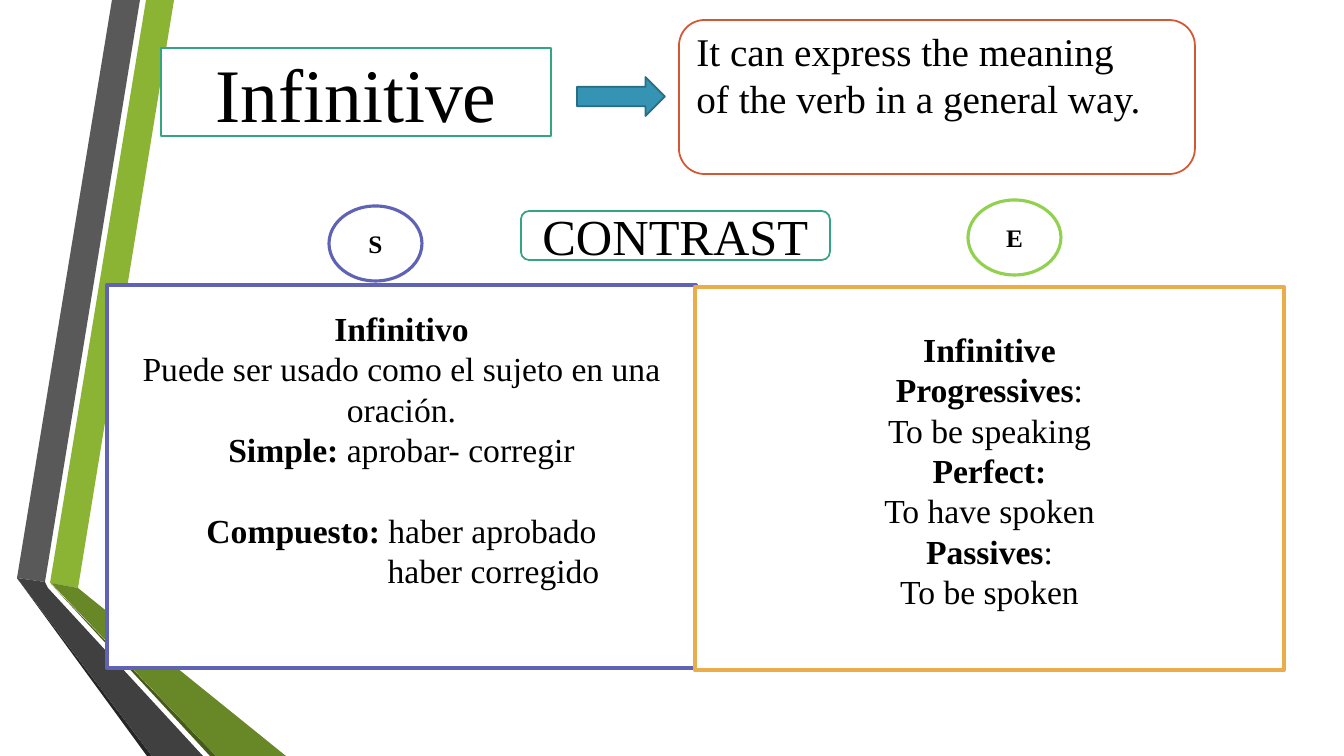
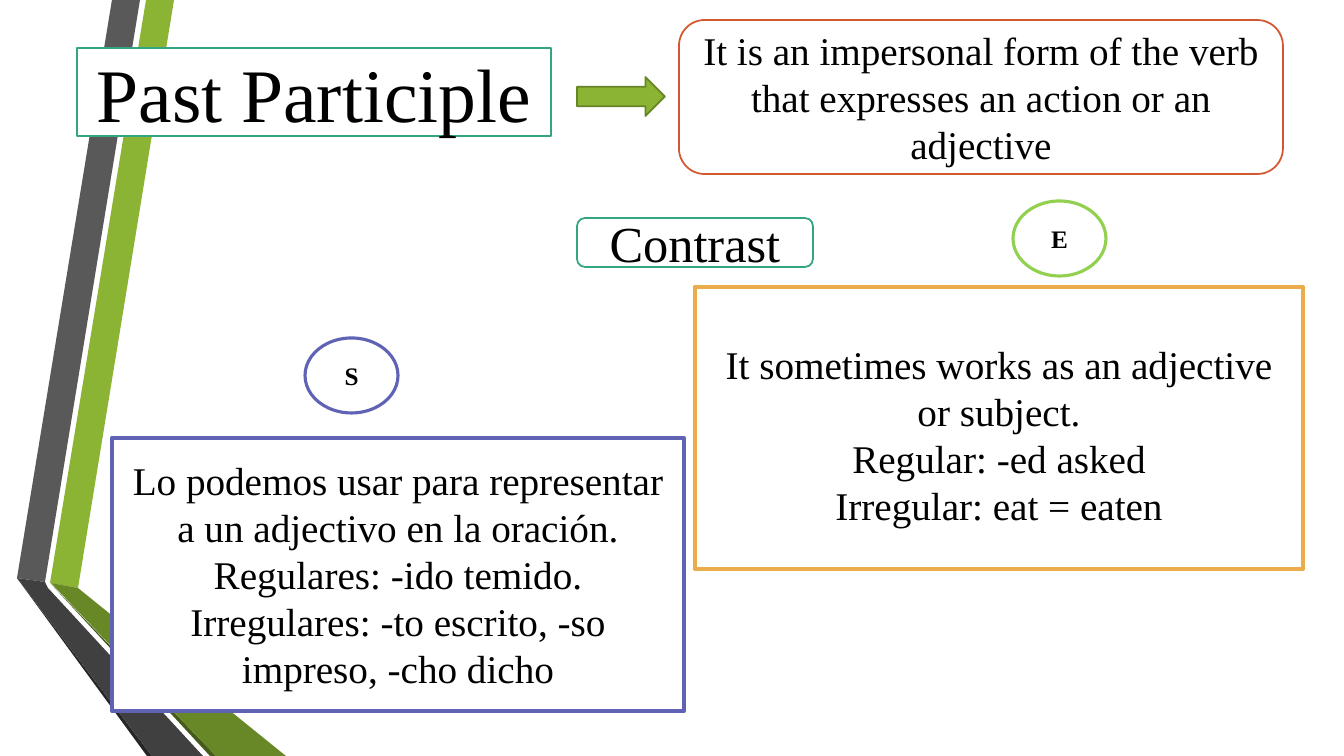
from dataclasses import dataclass

from lxml import etree
from pptx import Presentation
from pptx.dml.color import RGBColor
from pptx.enum.shapes import MSO_SHAPE
from pptx.enum.text import MSO_ANCHOR, MSO_AUTO_SIZE, PP_ALIGN
from pptx.oxml.ns import qn
from pptx.util import Pt

ROUNDED, RECTANGLE = MSO_SHAPE.ROUNDED_RECTANGLE, MSO_SHAPE.RECTANGLE
OVAL, RIGHT_ARROW = MSO_SHAPE.OVAL, MSO_SHAPE.RIGHT_ARROW
TOP, MIDDLE = MSO_ANCHOR.TOP, MSO_ANCHOR.MIDDLE
LEFT, CENTER = PP_ALIGN.LEFT, PP_ALIGN.CENTER
NO_AUTOFIT = MSO_AUTO_SIZE.NONE

WIDTH, HEIGHT = 1344, 756
EMU_PER_PX = 12192000 / WIDTH
TITLE_ONLY = 5


@dataclass(frozen=True)
class Theme:
    font: str = "Times New Roman"
    ink: str = "000000"
    paper: str = "FFFFFF"
    heading: str = "33A583"
    definition: str = "D35731"
    spanish: str = "6063B4"
    english: str = "EBAC4B"
    english_badge: str = "92D050"
    blue_arrow: tuple = ("3594B4", "276D85")
    green_arrow: tuple = ("8BB434", "678526")
    title_size: int = 54
    contrast_size: int = 36
    body_size: int = 28
    small_size: int = 24
    badge_size: int = 18
    thin: float = 1.25
    medium: float = 2.25
    thick: float = 3


THEME = Theme()

BANDS = (
    ("8BB434", [(50, 583), (78, 588), (174, 0), (146, 0)]),
    ("595959", [(140, 0), (112, 0), (17, 578), (45, 582)]),
    ("262626", [(17, 578), (147, 756), (152, 756)]),
    ("465A1A", [(51, 584), (210, 756), (216, 756)]),
    ("688727", [(51, 583), (216, 756), (286, 756), (78, 588)]),
    ("404040", [(17, 578), (152, 756), (203, 756), (48, 588), (45, 582)]),
)


def px(length):
    return round(length * EMU_PER_PX)


def rgb(value):
    return RGBColor.from_string(value)


class Deck:
    """Holds the theme and the current slide, and draws each kind of element."""

    def __init__(self, theme):
        self.theme = theme
        self.prs = Presentation()
        self.prs.slide_width, self.prs.slide_height = px(WIDTH), px(HEIGHT)
        self.layout = self.prs.slide_layouts[TITLE_ONLY]
        self.slide = None

    def new_slide(self):
        first = self.slide is None
        self.slide = self.prs.slides.add_slide(self.layout)
        if first:
            self.bands()

    def bands(self):
        for color, (start, *others) in BANDS:
            builder = self.slide.shapes.build_freeform(*start, scale=EMU_PER_PX)
            builder.add_line_segments(others, close=True)
            band = builder.convert_to_shape()
            band.shadow.inherit = False
            band.fill.solid()
            band.fill.fore_color.rgb = rgb(color)
            band.line.fill.background()
            self.layout.shapes.element.append(band.element)

    def paint(self, shape, fill, line, weight):
        shape.fill.solid()
        shape.fill.fore_color.rgb = rgb(fill)
        shape.line.color.rgb = rgb(line)
        shape.line.width = Pt(weight)

    def add_text(self, shape, paragraphs, size, align=CENTER, inset=None):
        frame = shape.text_frame
        frame.word_wrap = True
        frame.auto_size = NO_AUTOFIT
        frame.vertical_anchor = MIDDLE if inset is None else TOP
        if inset is not None:
            frame.margin_top = px(inset)
        for number, runs in enumerate(paragraphs):
            paragraph = frame.add_paragraph() if number else frame.paragraphs[0]
            paragraph.alignment = align
            for text, bold in runs:
                run = paragraph.add_run()
                run.text = text
                run.font.name = self.theme.font
                run.font.size = Pt(size)
                run.font.bold = bold
                run.font.color.rgb = rgb(self.theme.ink)
        return frame.paragraphs

    def shape(self, kind, box, fill, line, weight):
        shape = self.slide.shapes.add_shape(kind, *map(px, box))
        shape.shadow.inherit = False
        self.paint(shape, fill, line, weight)
        return shape

    def title(self, text, box):
        title = self.slide.shapes.title
        title.left, title.top, title.width, title.height = map(px, box)
        outline = etree.SubElement(title.element.spPr, qn("a:prstGeom"), prst="roundRect")
        etree.SubElement(outline, qn("a:avLst"))
        self.paint(title, self.theme.paper, self.theme.heading, self.theme.thin)
        self.add_text(title, [plain(text)], self.theme.title_size)

    def arrow(self, colors):
        self.shape(RIGHT_ARROW, (577, 77, 88, 39), *colors, self.theme.thin)

    def definition(self, lines, width, align=CENTER, inset=None):
        box = self.shape(ROUNDED, (679, 20, width, 154), self.theme.paper,
                         self.theme.definition, self.theme.thin)
        self.add_text(box, map(plain, lines), self.theme.body_size, align, inset)

    def contrast(self, text, left, top, width):
        box = self.shape(ROUNDED, (left, top, width, 49), self.theme.paper,
                         self.theme.heading, self.theme.thin)
        self.add_text(box, [plain(text)], self.theme.contrast_size)

    def badge(self, letter, left, top, color):
        circle = self.shape(OVAL, (left, top, 93, 75), self.theme.paper,
                            color, self.theme.medium)
        self.add_text(circle, [strong(letter)], self.theme.badge_size)

    def panel(self, paragraphs, box, color, size, inset):
        panel = self.shape(RECTANGLE, box, self.theme.paper, color, self.theme.thick)
        return self.add_text(panel, paragraphs, size, inset=inset)


def plain(text):
    return [(text, False)]


def strong(text):
    return [(text, True)]


def infinitive(deck):
    theme = deck.theme
    deck.new_slide()
    deck.title("Infinitive", (161, 48, 390, 88))
    deck.definition(["It can express the meaning", "of the verb in a general way."],
                    516, LEFT, 0)
    spanish = deck.panel([
        strong("Infinitivo"),
        plain("Puede ser usado como el sujeto en una oración."),
        strong("Simple: ") + plain("aprobar- corregir"),
        strong("Compuesto: ") + plain("haber aprobado"),
        plain("haber corregido"),
    ], (107, 285, 589, 383), theme.spanish, theme.small_size, 23)
    compound, second_example = spanish[-2:]
    compound.space_before = Pt(theme.small_size * 1.2)
    second_example._p.get_or_add_pPr().set("marL", str(px(184)))
    deck.panel([
        strong("Infinitive"),
        strong("Progressives") + plain(":"),
        plain("To be speaking"),
        strong("Perfect:"),
        plain("To have spoken"),
        strong("Passives") + plain(":"),
        plain("To be spoken"),
    ], (695, 287, 589, 383), theme.english, theme.small_size, 42)
    deck.arrow(theme.blue_arrow)
    deck.contrast("CONTRAST", 521, 211, 309)
    deck.badge("S", 329, 206, theme.spanish)
    deck.badge("E", 968, 200, theme.english_badge)


def past_participle(deck):
    theme = deck.theme
    deck.new_slide()
    deck.title("Past Participle", (77, 48, 474, 88))
    deck.definition(["It is an impersonal form of the verb that expresses "
                     "an action or an adjective"], 604)
    deck.panel(map(plain, [
        "Lo podemos usar para representar a un adjectivo en la oración.",
        "Regulares: -ido temido.",
        "Irregulares: -to escrito, -so impreso, -cho dicho",
    ]), (112, 438, 572, 273), theme.spanish, theme.body_size, 18)
    deck.panel(map(plain, [
        "It sometimes works as an adjective or subject.",
        "Regular: -ed asked",
        "Irregular: eat = eaten",
    ]), (695, 287, 608, 282), theme.english, theme.body_size, 53)
    deck.arrow(theme.green_arrow)
    deck.contrast("Contrast", 577, 218, 236)
    deck.badge("S", 305, 338, theme.spanish)
    deck.badge("E", 1013, 201, theme.english_badge)


def main():
    deck = Deck(THEME)
    infinitive(deck)
    past_participle(deck)
    deck.prs.save("out.pptx")


if __name__ == "__main__":
    main()
